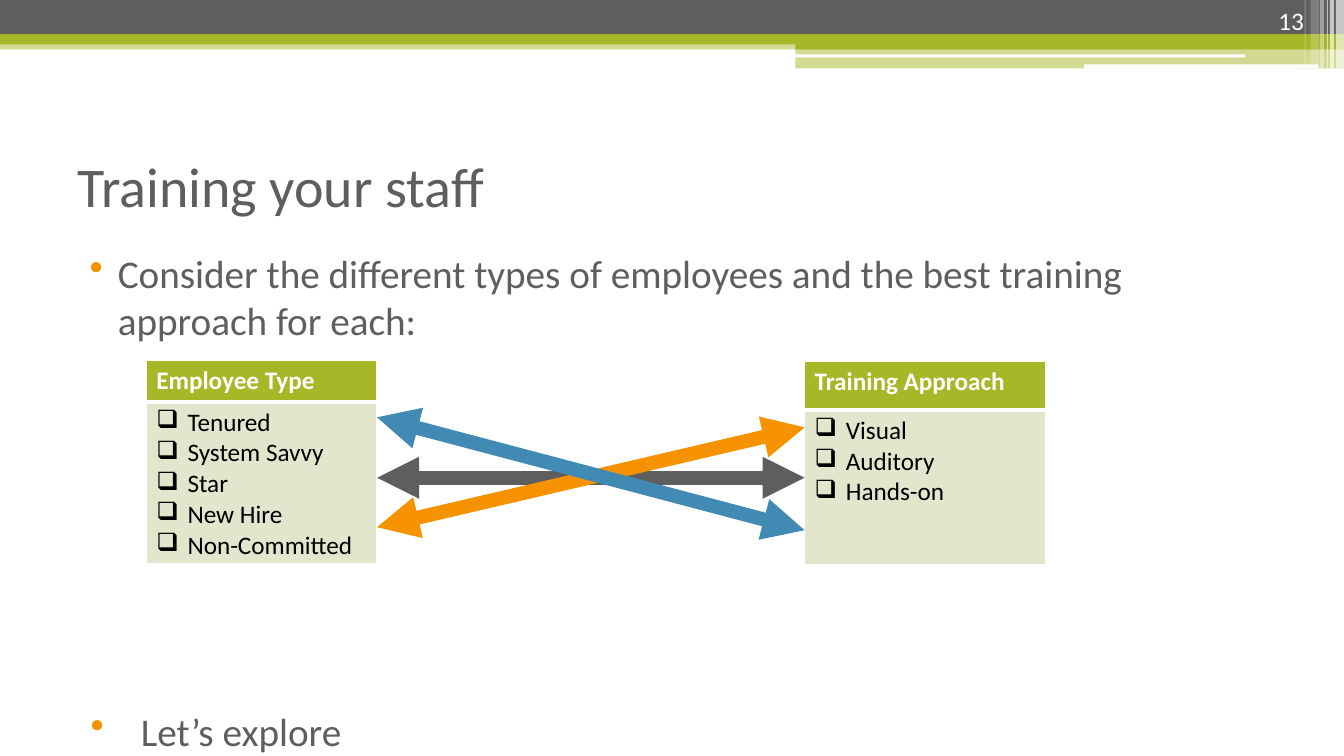
from pptx import Presentation
from pptx.dml.color import RGBColor
from pptx.enum import shapes, text
from pptx.oxml import ns, xmlchemy
from pptx.util import Inches, Pt

GREEN = RGBColor(0xA6, 0xB7, 0x27)
GREY = RGBColor(0x5E, 0x5E, 0x5E)
ORANGE = RGBColor(0xF6, 0x92, 0x00)
BLUE = RGBColor(0x41, 0x8A, 0xB3)
PALE = RGBColor(0xE1, 0xE6, 0xCD)
WHITE = RGBColor(0xFF, 0xFF, 0xFF)
BLACK = RGBColor(0, 0, 0)
FONT = "Calibri"

BANDS = [
    (0, 0.4, 13.33, 0.09, GREEN, 50),
    (0, 0, 13.33, 0.34, GREY, 100),
    (0, 0.34, 13.33, 0.1, GREEN, 100),
    (7.89, 0.39, 5.44, 0.1, GREEN, 100),
    (7.89, 0.48, 5.44, 0.2, GREEN, 50),
]
GROOVES = [(7.88, 0.54, 4.47, 0.03), (10.75, 0.64, 2.33, 0.04)]
STRIPES = [
    (13.25, 0.08, 0.68, 65),
    (13.19, 0.04, 0.68, 65),
    (13.16, 0.01, 0.68, 60),
    (13.09, 0.04, 0.68, 40),
    (13, 0.08, 0.64, 20),
    (12.94, 0.01, 0.64, 30),
]
EMPLOYEES = ["Tenured", "System Savvy", "Star", "New Hire", "Non-Committed"]
APPROACHES = ["Visual", "Auditory", "Hands-on"]
ARROWS = [
    (3.74, 4.74, 7.98, 4.74, GREY),
    (7.98, 4.24, 3.74, 5.23, ORANGE),
    (3.74, 4.14, 7.98, 5.26, BLUE),
]


def add_child(parent, tag, **attrs):
    child = xmlchemy.OxmlElement(tag)
    for name, value in attrs.items():
        child.set(name, str(value))
    parent.append(child)
    return child


def add_band(slide, x, y, w, h, color, alpha=100, kind=shapes.MSO_SHAPE.RECTANGLE):
    sp = slide.shapes.add_shape(kind, Inches(x), Inches(y), Inches(w), Inches(h))
    sp.shadow.inherit = False
    sp.line.fill.background()
    sp.fill.solid()
    sp.fill.fore_color.rgb = color
    if alpha < 100:
        clr = sp.element.spPr.find(".//" + ns.qn("a:srgbClr"))
        add_child(clr, "a:alpha", val=alpha * 1000)


def write(p, words, size, color, bold=False):
    p.text = words
    for r in p.runs:
        r.font.name = FONT
        r.font.size = Pt(size)
        r.font.bold = bold
        r.font.color.rgb = color


def set_bullet(p, char, left, hanging, color=None):
    pPr = p._p.get_or_add_pPr()
    pPr.set("marL", str(Inches(left)))
    pPr.set("indent", str(-Inches(hanging)))
    if color is not None:
        add_child(add_child(pPr, "a:buClr"), "a:srgbClr", val=color)
    add_child(pPr, "a:buChar", char=char)


def add_box(slide, x, y, w, h, anchor):
    tf = slide.shapes.add_textbox(Inches(x), Inches(y), Inches(w), Inches(h)).text_frame
    tf.word_wrap = True
    tf.vertical_anchor = anchor
    return tf


def add_body(slide):
    tf = add_box(slide, 0.67, 2.42, 12, 4.73, text.MSO_ANCHOR.TOP)
    items = [
        ("Consider the different types of employees and the best training approach for each:",
         0.4, 0.28, 3),
        ("Let’s explore", 0.63, 0.5, 260),
    ]
    for i, (words, left, hanging, gap) in enumerate(items):
        p = tf.add_paragraph() if i else tf.paragraphs[0]
        write(p, words, 28, GREY)
        p.space_before = Pt(gap)
        set_bullet(p, "•", left, hanging, ORANGE)


def style_cell(cell, fill, bottom):
    cell.fill.solid()
    cell.fill.fore_color.rgb = fill
    tcPr = cell._tc.get_or_add_tcPr()
    for i, (side, width) in enumerate([("L", 1), ("R", 1), ("T", 1), ("B", bottom)]):
        ln = add_child(tcPr, "a:ln" + side, w=Pt(width))
        add_child(add_child(ln, "a:solidFill"), "a:srgbClr", val=WHITE)
        tcPr.insert(i, ln)


def add_checklist(slide, x, y, w, heights, heading, items):
    table = slide.shapes.add_table(
        2, 1, Inches(x), Inches(y), Inches(w), Inches(sum(heights))).table
    for row, height in zip(table.rows, heights):
        row.height = Inches(height)
    head, body = table.cell(0, 0), table.cell(1, 0)
    style_cell(head, GREEN, 3)
    style_cell(body, PALE, 1)
    write(head.text_frame.paragraphs[0], heading, 18, WHITE, True)
    body.text_frame.text = "\n".join(items)
    for p, item in zip(body.text_frame.paragraphs, items):
        write(p, item, 18, BLACK)
        set_bullet(p, "❑", 0.31, 0.31)


def add_arrow(slide, x1, y1, x2, y2, color):
    cn = slide.shapes.add_connector(
        shapes.MSO_CONNECTOR.STRAIGHT, Inches(x1), Inches(y1), Inches(x2), Inches(y2))
    cn.line.width = Pt(10)
    cn.line.color.rgb = color
    ln = cn.line._get_or_add_ln()
    add_child(ln, "a:headEnd", type="triangle")
    add_child(ln, "a:tailEnd", type="triangle")
    add_child(cn.element.spPr, "a:effectLst")


def main():
    prs = Presentation()
    prs.slide_width, prs.slide_height = Inches(13.33), Inches(7.5)
    slide = prs.slides.add_slide(prs.slide_layouts[6])

    for band in BANDS:
        add_band(slide, *band)
    for groove in GROOVES:
        add_band(slide, *groove, WHITE, kind=shapes.MSO_SHAPE.ROUNDED_RECTANGLE)
    for x, w, h, alpha in STRIPES:
        add_band(slide, x, 0, w, h, WHITE, alpha)

    number = add_box(slide, 11.92, 0, 1.11, 0.4, text.MSO_ANCHOR.BOTTOM).paragraphs[0]
    write(number, "13", 18, WHITE)
    number.alignment = text.PP_ALIGN.RIGHT
    title = add_box(slide, 0.67, 1.25, 12, 1.17, text.MSO_ANCHOR.MIDDLE).paragraphs[0]
    write(title, "Training your staff", 40, GREY)
    add_body(slide)

    add_checklist(slide, 1.45, 3.58, 2.29, (0.41, 1.6), "Employee Type", EMPLOYEES)
    add_checklist(slide, 7.98, 3.59, 2.39, (0.48, 1.53), "Training Approach", APPROACHES)
    for arrow in ARROWS:
        add_arrow(slide, *arrow)

    prs.save("out.pptx")


if __name__ == "__main__":
    main()
